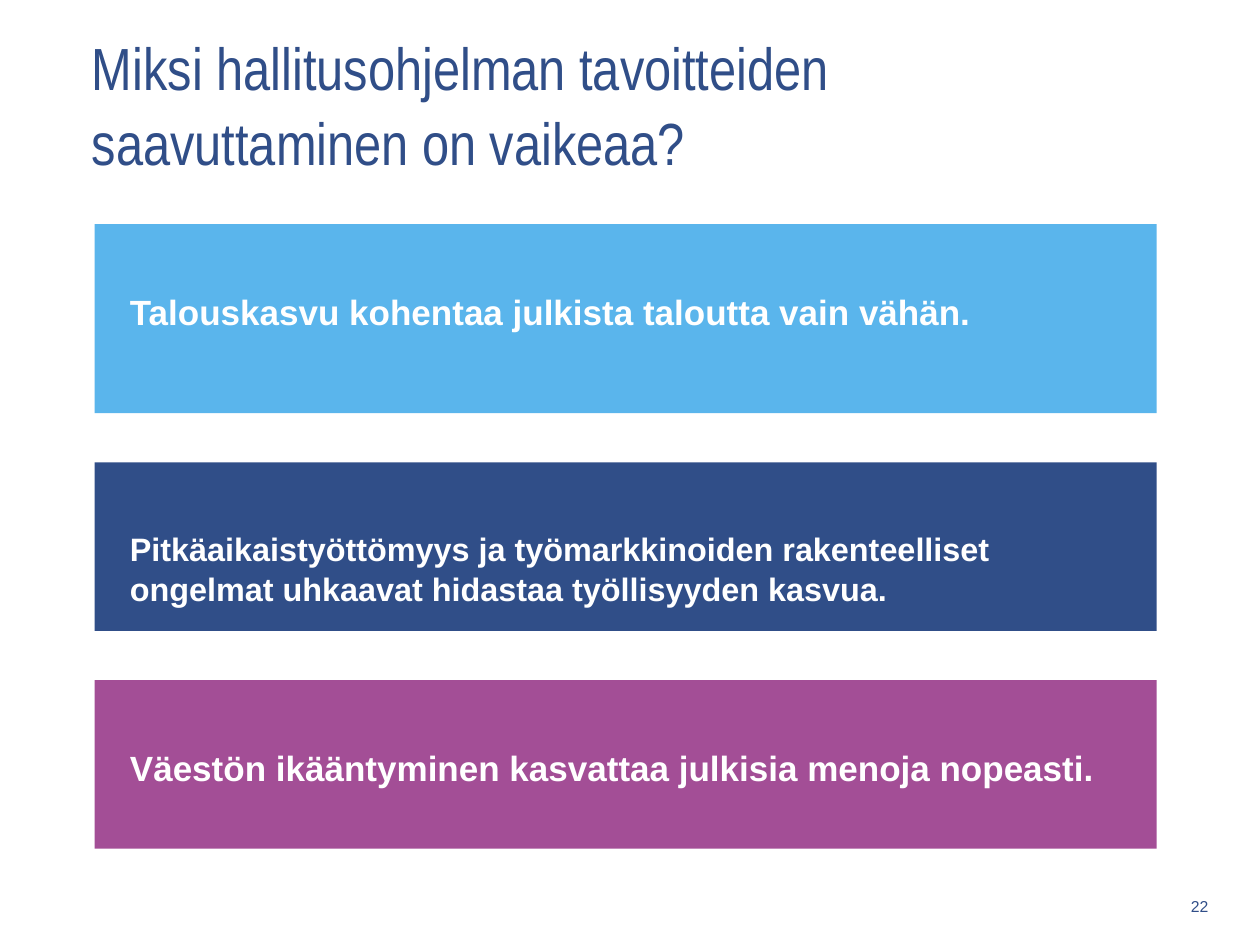
from dataclasses import dataclass

from pptx import Presentation
from pptx import util as u
from pptx.dml.color import RGBColor
from pptx.enum import shapes, text


@dataclass(frozen=True)
class Theme:
    navy: RGBColor = RGBColor.from_string("304E88")
    sky: RGBColor = RGBColor.from_string("5AB5EC")
    plum: RGBColor = RGBColor.from_string("A34E96")
    white: RGBColor = RGBColor.from_string("FFFFFF")
    title_font: str = "Arial Narrow"
    body_font: str = "Arial"
    title_size: float = 34
    body_size: float = 20
    long_body_size: float = 18.5
    number_size: float = 9
    line_spacing: float = 1.05


THEME = Theme()


def place(sp, box):
    sp.left, sp.top, sp.width, sp.height = (u.Cm(v) for v in box)


def write(tf, words, font, size, color, bold=False, align=text.PP_ALIGN.LEFT):
    tf.word_wrap = True
    tf.auto_size = text.MSO_AUTO_SIZE.NONE
    p = tf.paragraphs[0]
    p.text = words
    p.alignment = align
    p.line_spacing = THEME.line_spacing
    p.font.name, p.font.size, p.font.bold = font, u.Pt(size), bold
    p.font.color.rgb = color
    return p


def add_title(s, box, words):
    sp = s.shapes.title
    place(sp, box)
    sp.text_frame.vertical_anchor = text.MSO_ANCHOR.MIDDLE
    write(sp.text_frame, words, THEME.title_font, THEME.title_size, THEME.navy)


def add_page_number(s, box, number):
    sp = s.shapes.add_textbox(*(u.Cm(v) for v in box))
    sp.text_frame.vertical_anchor = text.MSO_ANCHOR.MIDDLE
    write(sp.text_frame, number, THEME.body_font, THEME.number_size, THEME.navy,
          align=text.PP_ALIGN.RIGHT)


def add_bar(s, box, words, fill, size):
    sp = s.shapes.add_shape(shapes.MSO_SHAPE.RECTANGLE, *(u.Cm(v) for v in box))
    sp.shadow.inherit = False
    sp.fill.solid()
    sp.fill.fore_color.rgb = fill
    sp.line.fill.background()
    tf = sp.text_frame
    tf.vertical_anchor = text.MSO_ANCHOR.TOP
    tf.margin_left, tf.margin_top = u.Cm(0.71), u.Cm(1.3)
    tf.margin_right = tf.margin_bottom = u.Cm(0.51)
    p = write(tf, words, THEME.body_font, size, THEME.white, bold=True)
    p.space_after = u.Pt(6)


def add_bars(s, box, bars, gap=0.99):
    """Stack the bars downwards from the top of the box."""
    left, top, width = box
    for words, fill, size, height in bars:
        add_bar(s, (left, top, width, height), words, fill, size)
        top += height + gap


def main():
    prs = Presentation()
    prs.slide_width, prs.slide_height = u.Cm(25.4), u.Cm(19.05)
    s = prs.slides.add_slide(prs.slide_layouts[5])

    # Heading
    add_title(s, (1.6, 0.41, 20.29, 3.3),
              "Miksi hallitusohjelman tavoitteiden saavuttaminen on vaikeaa?")

    # Three reasons
    add_bars(s, (1.91, 4.52, 21.41), [
        ("Talouskasvu kohentaa julkista taloutta vain vähän.",
         THEME.sky, THEME.body_size, 3.81),
        ("Pitkäaikaistyöttömyys ja työmarkkinoiden rakenteelliset ongelmat "
         "uhkaavat hidastaa työllisyyden kasvua.",
         THEME.navy, THEME.long_body_size, 3.4),
        ("Väestön ikääntyminen kasvattaa julkisia menoja nopeasti.",
         THEME.plum, THEME.body_size, 3.4),
    ])

    # Page number
    add_page_number(s, (23.29, 17.86, 1.32, 0.81), "22")

    prs.save("out.pptx")


if __name__ == "__main__":
    main()
